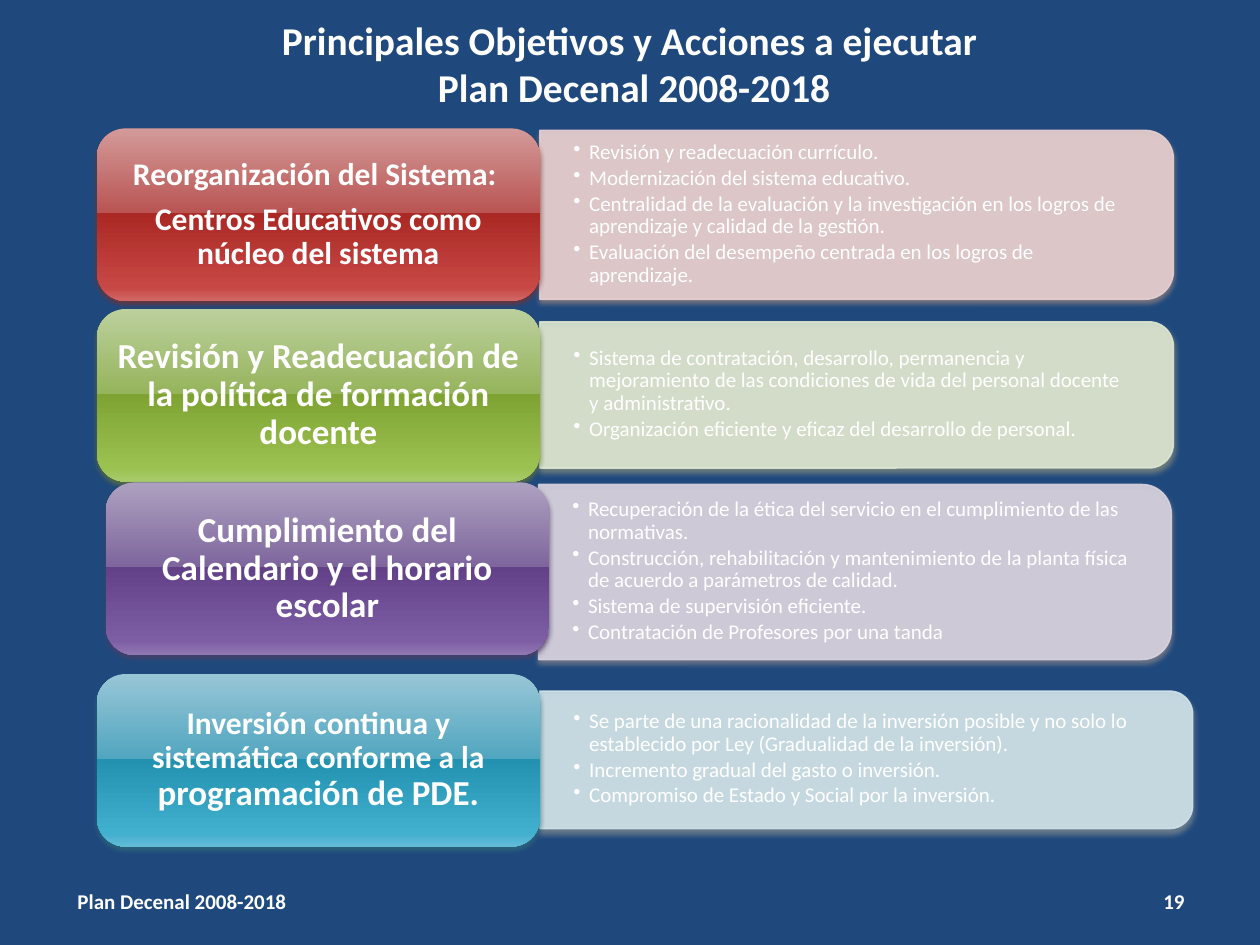
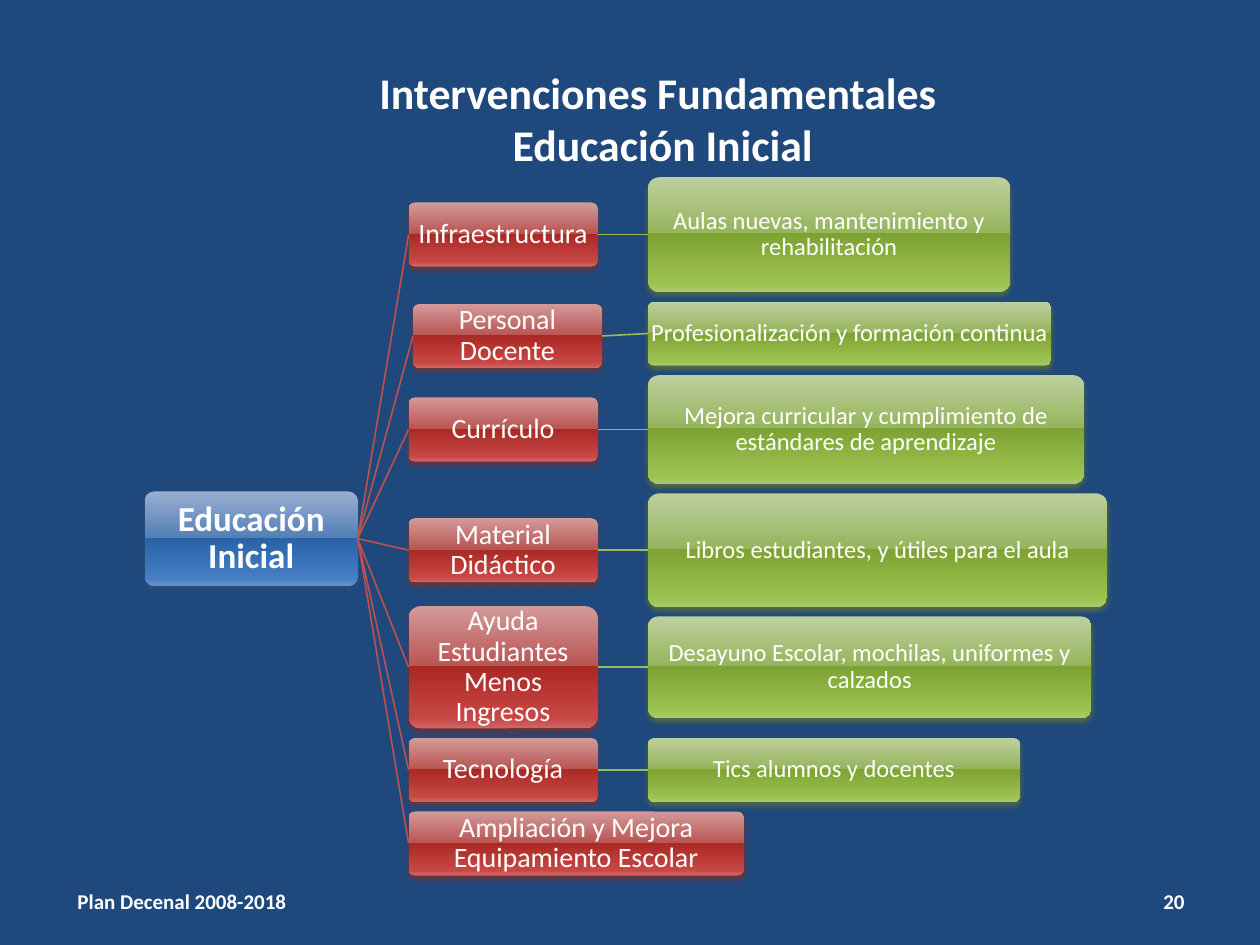
"""Builds two slides of the ten-year education plan: objectives and early-education interventions."""
from lxml.etree import SubElement
from pptx import Presentation
from pptx.dml.color import RGBColor
from pptx.enum.shapes import MSO_CONNECTOR as LINE, MSO_SHAPE as SHAPE
from pptx.enum.text import MSO_ANCHOR as ANCHOR, PP_ALIGN as ALIGN
from pptx.oxml.ns import qn
from pptx.util import Pt

COLORS = {"background": "1F497D", "text": "FFFFFF", "hub_line": "C0504D", "leaf_line": "9BBB59"}
THEMES = {
    "red": {"gloss": ("D39A99", "B95553", "AA2925", "C74744", "D16765"),
            "shadow": "773130", "pale": "E8D0D0", "pale_shadow": "908180"},
    "green": {"gloss": ("BCD09D", "96B45C", "7EA332", "9BC150", "A9CB6D"),
              "shadow": "607337", "pale": "DEE7D1", "pale_shadow": "898F81"},
    "purple": {"gloss": ("ADA1C0", "7E669D", "624189", "7D5EA5", "9178B2"),
               "shadow": "4F3E64", "pale": "D8D3E0", "pale_shadow": "85828A"},
    "teal": {"gloss": ("98C6D7", "51A6BF", "2292B0", "41AFCE", "63BBD7"),
             "shadow": "2E6A7A", "pale": "D0E3EA", "pale_shadow": "808C91"},
    "blue": {"gloss": ("99AED1", "547FB7", "2862A7", "467EC4", "6690CE"), "shadow": "315075"},
}
GLOSS_STOPS = (0, 49, 49, 92, 100)
FOOTER = "Plan Decenal 2008-2018"

OBJECTIVES_TITLE = "Principales Objetivos y Acciones a ejecutar\v Plan Decenal 2008-2018"
OBJECTIVES = [
    {"theme": "red", "heading": [[("Reorganización del Sistema: ", 18)],
                                 [("Centros Educativos como núcleo del sistema", 18)]],
     "heading_at": (55.4, 73.4), "panel": (308.5, 122.8, 362, 96.5),
     "actions": ["Revisión y readecuación currículo.",
                 "Modernización del sistema educativo.",
                 "Centralidad de la evaluación y la investigación en los logros de aprendizaje"
                 " y calidad de la gestión.",
                 "Evaluación del desempeño centrada en los logros de aprendizaje."]},
    {"theme": "green",
     "heading": [[("Revisión y Readecuación de la política de formación docente", 20)]],
     "heading_at": (55.4, 176.6), "panel": (308.5, 225.7, 362, 83.5),
     "actions": ["Sistema de contratación, desarrollo, permanencia y mejoramiento de las"
                 " condiciones de vida del personal docente y administrativo.",
                 "Organización eficiente y eficaz del desarrollo de personal."]},
    {"theme": "purple",
     "heading": [[("Cumplimiento del Calendario y el horario escolar", 20)]],
     "heading_at": (60.5, 275.7), "panel": (307.8, 326.9, 361.5, 100),
     "actions": ["Recuperación de la ética del servicio en el cumplimiento de las normativas.",
                 "Construcción, rehabilitación y mantenimiento de la planta física de acuerdo"
                 " a parámetros de calidad.",
                 "Sistema de supervisión eficiente.",
                 "Contratación de Profesores por una tanda"]},
    {"theme": "teal",
     "heading": [[("Inversión continua y sistemática conforme a la ", 18),
                  ("programación de PDE.", 20)]],
     "heading_at": (55.4, 385.2), "panel": (308.5, 434.2, 373, 78.5),
     "actions": ["Se parte de una racionalidad de la inversión posible y no solo lo establecido"
                 " por Ley (Gradualidad de la inversión).",
                 "Incremento gradual del gasto o inversión.",
                 "Compromiso de Estado y Social por la inversión."]},
]
HEADING_SIZE = (253.2, 98.6)

INTERVENTIONS_TITLE = "Intervenciones Fundamentales \vEducación Inicial"
HUB = ("Educación Inicial", 82.8, 307.8, 121.6, 54)
BRANCHES = [
    {"branch": ("Infraestructura", 233.5, 134, 108, 36.5),
     "leaf": ("Aulas nuevas, mantenimiento y rehabilitación", 134, 207, 65.5)},
    {"branch": ("Personal Docente", 236, 192, 108, 36.5),
     "leaf": ("Profesionalización y formación continua", 190.6, 230.4, 36.5)},
    {"branch": ("Currículo", 233.5, 245.4, 108, 36.5),
     "leaf": ("Mejora curricular y cumplimiento de estándares de aprendizaje", 245.4, 249.2, 62)},
    {"branch": ("Material Didáctico", 233.5, 314.4, 108, 36.5),
     "leaf": ("Libros estudiantes, y útiles para el aula", 314.4, 262.4, 65)},
    {"branch": ("Ayuda Estudiantes Menos Ingresos", 233.5, 381.3, 108, 69.8),
     "leaf": ("Desayuno Escolar, mochilas, uniformes y calzados", 381.3, 253.4, 58)},
    {"branch": ("Tecnología", 233.5, 440, 108, 36.5),
     "leaf": ("Tics alumnos y docentes", 440, 212.6, 36.5)},
    {"branch": ("Ampliación y Mejora Equipamiento Escolar", 233.5, 482, 191.5, 36.5)},
]
LEAF_LEFT = 370.3

BOX_FORMAT = {"word_wrap": True, "vertical_anchor": ANCHOR.MIDDLE}
MARGINS = ("margin_left", "margin_top", "margin_right", "margin_bottom")


def apply(target, values):
    for name, value in values.items():
        setattr(target, name, value)


def write(shape, paragraphs, margins=(7.2, 3.6, 7.2, 3.6), bold=False, bullet=False, **layout):
    frame = shape.text_frame
    apply(frame, BOX_FORMAT | {name: Pt(size) for name, size in zip(MARGINS, margins)})
    for index, runs in enumerate(paragraphs):
        paragraph = frame.add_paragraph() if index else frame.paragraphs[0]
        apply(paragraph, layout)
        for text, size in runs:
            for part, line in enumerate(text.split("\v")):
                if part:
                    paragraph.add_line_break()
                run = paragraph.add_run()
                run.text = line
                apply(run.font, {"size": Pt(size), "name": "Calibri", "bold": bold})
                run.font.color.rgb = RGBColor.from_string(COLORS["text"])
        if bullet:
            properties = paragraph._p.get_or_add_pPr()
            properties.set("marL", str(Pt(9)))
            properties.set("indent", str(Pt(-9)))
            SubElement(properties, qn("a:buChar"), char="•")


def add_color(parent, color, alpha=100):
    node = SubElement(parent, qn("a:srgbClr"), val=color)
    if alpha < 100:
        SubElement(node, qn("a:alpha"), val=str(alpha * 1000))


def add_shadow(shape, color):
    shape.shadow.inherit = False
    effects = shape._element.spPr.find(qn("a:effectLst"))
    outer = SubElement(effects, qn("a:outerShdw"), blurRad=str(Pt(3.1)), dist=str(Pt(2)),
                       dir="5400000", rotWithShape="0")
    add_color(outer, color, 83)


def add_text(slide, box, text, size, align):
    write(slide.shapes.add_textbox(*map(Pt, box)), [[(text, size)]], bold=True, alignment=align)


def add_glossy(slide, box, theme, paragraphs, margins, bold=False, corner=None):
    shape = slide.shapes.add_shape(SHAPE.ROUNDED_RECTANGLE, *map(Pt, box))
    if corner:
        shape.adjustments[0] = corner
    shape.fill.gradient()
    shape.fill.gradient_angle = 270
    stops = shape._element.spPr.find(qn("a:gradFill")).find(qn("a:gsLst"))
    stops.clear()
    for position, color in zip(GLOSS_STOPS, THEMES[theme]["gloss"]):
        add_color(SubElement(stops, qn("a:gs"), pos=str(position * 1000)), color)
    shape.line.fill.background()
    add_shadow(shape, THEMES[theme]["shadow"])
    write(shape, paragraphs, margins, bold, alignment=ALIGN.CENTER, line_spacing=0.9,
          space_after=Pt(paragraphs[0][0][1] * 0.35))
    return shape


def add_panel(slide, panel, theme, actions):
    left, middle, width, height = panel
    shape = slide.shapes.add_shape(SHAPE.ROUND_2_SAME_RECTANGLE, Pt(left + (width - height) / 2),
                                   Pt(middle - width / 2), Pt(height), Pt(width))
    shape.rotation = 90
    color = RGBColor.from_string(THEMES[theme]["pale"])
    shape.fill.solid()
    shape.fill.fore_color.rgb = shape.line.color.rgb = color
    shape.line.width = Pt(0.9)
    for node in shape._element.spPr.iter(qn("a:srgbClr")):
        SubElement(node, qn("a:alpha"), val="90000")
    add_shadow(shape, THEMES[theme]["pale_shadow"])
    box = (left, middle - height / 2 + 4, width - 5, height - 9)
    write(slide.shapes.add_textbox(*map(Pt, box)), [[(action, 12)] for action in actions],
          (19.2, 9.6, 19.2, 9.6), bullet=True, line_spacing=0.9, space_after=Pt(1.8))


def add_node(slide, text, left, middle, width, height, theme, size, bold=False):
    box = (left, middle - height / 2, width, height)
    return add_glossy(slide, box, theme, [[(text, size)]], (0.8,) * 4, bold, corner=0.1)


def join(slide, start, end, color):
    link = slide.shapes.add_connector(LINE.STRAIGHT, 0, 0, 0, 0)
    link.begin_connect(start, 3)
    link.end_connect(end, 1)
    link.line.color.rgb = RGBColor.from_string(color)
    link.line.width = Pt(0.9)
    SubElement(link._element.spPr, qn("a:effectLst"))


def add_slide(deck, title, title_box, title_size, number):
    slide = deck.slides.add_slide(deck.slide_layouts[6])
    slide.background.fill.solid()
    slide.background.fill.fore_color.rgb = RGBColor.from_string(COLORS["background"])
    add_text(slide, title_box, title, title_size, ALIGN.CENTER)
    add_text(slide, (516, 500.4, 168, 28.8), str(number), 12, ALIGN.RIGHT)
    add_text(slide, (33.8, 500.4, 140.4, 28.8), FOOTER, 12, ALIGN.CENTER)
    return slide


def build_objectives(deck):
    slide = add_slide(deck, OBJECTIVES_TITLE, (36, 21.6, 648, 28.8), 22.5, 19)
    for objective in OBJECTIVES:
        theme = objective["theme"]
        add_panel(slide, objective["panel"], theme, objective["actions"])
        add_glossy(slide, objective["heading_at"] + HEADING_SIZE, theme, objective["heading"],
                   (5.4, 2.8, 5.4, 2.8), bold=True)


def build_interventions(deck):
    slide = add_slide(deck, INTERVENTIONS_TITLE, (90, 22.3, 577.4, 90), 25, 20)
    hub = add_node(slide, *HUB, "blue", 20, bold=True)
    for row in BRANCHES:
        branch = add_node(slide, *row["branch"], "red", 16)
        join(slide, hub, branch, COLORS["hub_line"])
        if "leaf" in row:
            text, *place = row["leaf"]
            leaf = add_node(slide, text, LEAF_LEFT, *place, "green", 14)
            join(slide, branch, leaf, COLORS["leaf_line"])


def main():
    deck = Presentation()
    deck.slide_width, deck.slide_height = Pt(720), Pt(540)
    build_objectives(deck)
    build_interventions(deck)
    deck.save("out.pptx")


if __name__ == "__main__":
    main()
